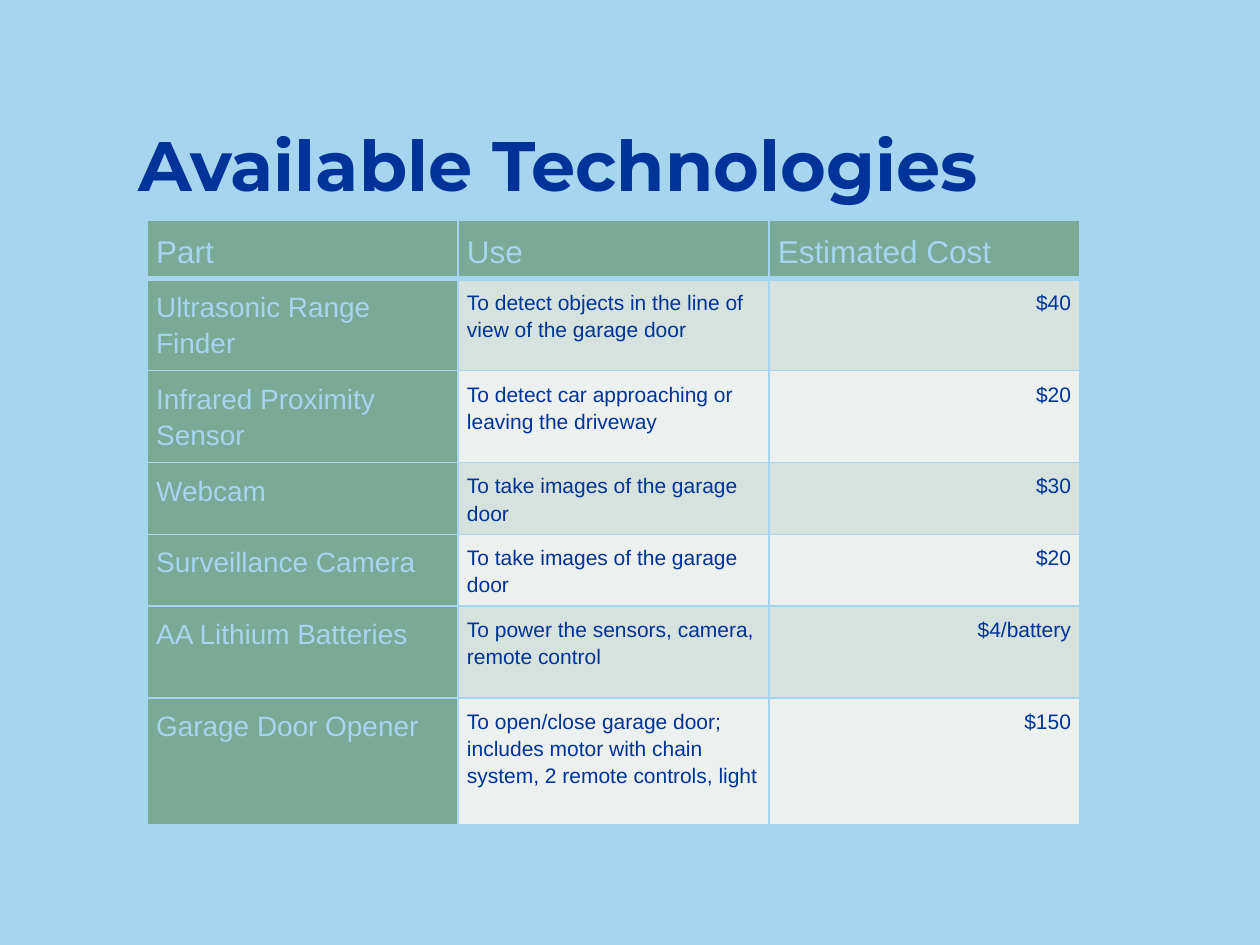
from dataclasses import dataclass

from lxml import etree
from pptx import Presentation
from pptx.dml.color import RGBColor
from pptx.enum.text import MSO_ANCHOR, PP_ALIGN
from pptx.oxml.ns import qn
from pptx.util import Inches, Pt

LEFT, RIGHT = PP_ALIGN.LEFT, PP_ALIGN.RIGHT
MIDDLE = MSO_ANCHOR.MIDDLE
TITLE_ONLY = 5


@dataclass(frozen=True)
class Theme:
    sky: str = "A5D5EF"
    navy: str = "003399"
    green: str = "78AA95"
    bands: tuple = ("D6E2DD", "ECF1EF")
    title_font: str = "Montserrat"
    table_font: str = "Arial"
    title_size: int = 40
    header_size: int = 18
    part_size: int = 16
    detail_size: int = 12
    line_spacing: float = 1.15
    cell_margin: float = 0.07
    rule: int = 1
    header_rule: int = 3


class SlideBuilder:
    """Holds the theme and the current slide; places are shares of its size."""

    def __init__(self, theme, width, height):
        self.theme = theme
        self.deck = Presentation()
        self.deck.slide_width, self.deck.slide_height = Inches(width), Inches(height)
        self.slide = self.deck.slides.add_slide(self.deck.slide_layouts[TITLE_ONLY])
        background = self.slide.background.fill
        background.solid()
        background.fore_color.rgb = RGBColor.from_string(theme.sky)

    def area(self, left, top, width, height):
        across, down = self.deck.slide_width, self.deck.slide_height
        return (round(left * across), round(top * down),
                round(width * across), round(height * down))

    def style(self, paragraph, font_name, size, color, bold=False, align=LEFT):
        paragraph.alignment = align
        font = paragraph.font
        font.name, font.size, font.bold = font_name, Pt(size), bold
        font.color.rgb = RGBColor.from_string(color)

    def title(self, text, *place):
        heading = self.slide.shapes.title
        heading.left, heading.top, heading.width, heading.height = self.area(*place)
        frame = heading.text_frame
        frame.text = text
        frame.word_wrap = True
        frame.vertical_anchor = MIDDLE
        theme = self.theme
        self.style(frame.paragraphs[0], theme.title_font, theme.title_size,
                   theme.navy, bold=True)

    def borders(self, cell, bottom):
        properties = cell._tc.get_or_add_tcPr()
        rule = self.theme.rule
        for side, points in zip("LRTB", (rule, rule, rule, bottom)):
            line = etree.SubElement(properties, qn(f"a:ln{side}"), w=str(Pt(points)))
            fill = etree.SubElement(line, qn("a:solidFill"))
            etree.SubElement(fill, qn("a:srgbClr"), val=self.theme.sky)

    def cell(self, cell, text, fill, size, color, align, bottom):
        theme = self.theme
        self.borders(cell, bottom)
        cell.fill.solid()
        cell.fill.fore_color.rgb = RGBColor.from_string(fill)
        margin = Inches(theme.cell_margin)
        cell.margin_left = cell.margin_right = margin
        cell.margin_top = cell.margin_bottom = margin
        cell.text = text
        paragraph = cell.text_frame.paragraphs[0]
        paragraph.line_spacing = theme.line_spacing
        self.style(paragraph, theme.table_font, size, color, align=align)

    def table(self, rows, row_shares, left, top, width):
        theme = self.theme
        place = self.area(left, top, width, sum(row_shares))
        table = self.slide.shapes.add_table(len(rows), len(rows[0]), *place).table
        table.first_row = table.horz_banding = False
        for column in table.columns:
            column.width = place[2] // len(rows[0])
        for r, (row, share) in enumerate(zip(rows, row_shares)):
            table.rows[r].height = round(share * self.deck.slide_height)
            for c, text in enumerate(row):
                # Header row and part names are green; details are banded
                if r == 0:
                    look = theme.green, theme.header_size, theme.sky, LEFT, theme.header_rule
                elif c == 0:
                    look = theme.green, theme.part_size, theme.sky, LEFT, theme.rule
                else:
                    align = RIGHT if c == 2 else LEFT
                    look = (theme.bands[(r - 1) % 2], theme.detail_size,
                            theme.navy, align, theme.rule)
                self.cell(table.cell(r, c), text, *look)


PARTS = [
    ("Part", "Use", "Estimated Cost"),
    ("Ultrasonic Range Finder",
     "To detect objects in the line of view of the garage door", "$40"),
    ("Infrared Proximity Sensor",
     "To detect car approaching or leaving the driveway", "$20"),
    ("Webcam", "To take images of the garage door", "$30"),
    ("Surveillance Camera", "To take images of the garage door", "$20"),
    ("AA Lithium Batteries", "To power the sensors, camera, remote control", "$4/battery"),
    ("Garage Door Opener",
     "To open/close garage door; includes motor with chain system, "
     "2 remote controls, light", "$150"),
]
WIDTH, HEIGHT = 10, 7.5
ROW_HEIGHTS = (0.46, 0.73, 0.73, 0.46, 0.46, 0.73, 1.01)


def main():
    builder = SlideBuilder(Theme(), WIDTH, HEIGHT)
    # Heading
    builder.title("Available Technologies", 0.1, 0.58 / HEIGHT, 0.77, 1.43 / HEIGHT)
    # Parts, their uses and costs
    builder.table(PARTS, [height / HEIGHT for height in ROW_HEIGHTS],
                  0.117, 1.75 / HEIGHT, 0.74)
    builder.deck.save("out.pptx")


if __name__ == "__main__":
    main()
